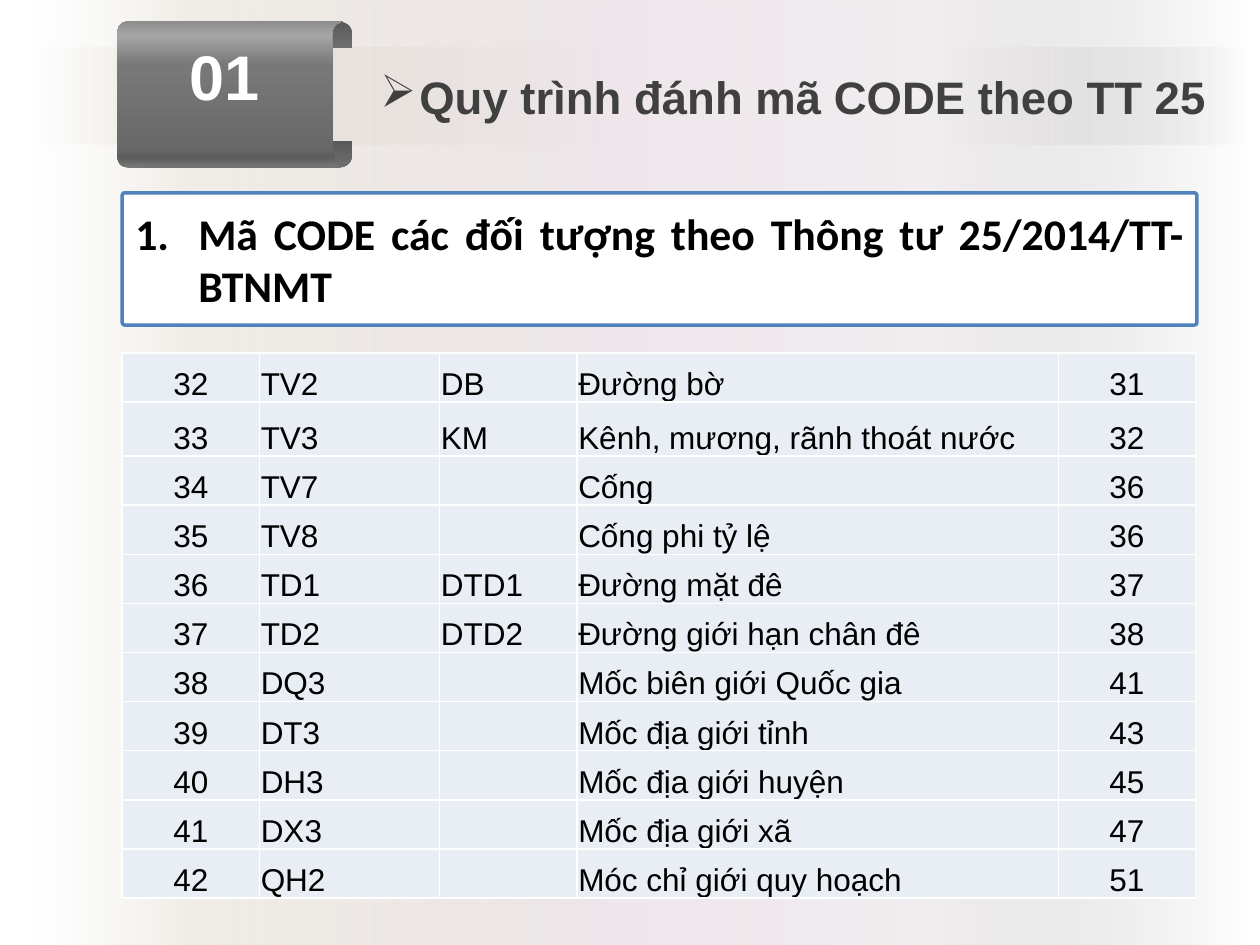
from lxml.etree import SubElement
from pptx import Presentation
from pptx.dml.color import RGBColor
from pptx.enum.shapes import MSO_SHAPE
from pptx.enum.text import MSO_ANCHOR, MSO_AUTO_SIZE, PP_ALIGN
from pptx.oxml.ns import qn
from pptx.util import Inches, Pt

COLORS = {
    "white": "FFFFFF", "black": "000000", "title": "404040", "frame": "4F81BD",
    "cell": "E9EDF4", "mist": "C8C7C6", "pearl": "F0EDEF", "rose": "EEE6EB",
    "sand": "E2DCD1", "cream": "EFEBE5", "curl_dark": "5A5A5A",
    "curl_light": "6E6E6E", "steel": "787878", "shade": "5D5D5D",
    "slate": "696969", "shine": "A5A5A5", "rim": "8C8C8C",
}
BACKDROP_STOPS = [(0, "mist", 0), (25, "pearl", 100), (50, "rose", 100),
                  (85, "sand", 52), (98, "cream", 0)]
CURL_STOPS = [(0, "curl_dark", 100), (100, "curl_light", 100)]
SCROLL_STOPS = [(0, "steel", 100), (7, "shade", 100), (15, "slate", 100),
                (70, "steel", 100), (90, "shine", 100), (100, "rim", 100)]
CURL = [(1.87, 0.21), (0, 0.21), (0.01, 0.04, 0.01, -0.01, 0.17, 0),
        (1.73, 0), (1.87, 0, 1.87, 0.07, 1.87, 0.21)]
SCROLL = [(1.79, 0), (0.32, 0), (0.06, 0, 0, -0.03, 0, 0.13),
          (0, 0.41, 0, 0.7, 0, 0.98), (-0.01, 1.2, 0.05, 1.16, 0.26, 1.16),
          (1.8, 1.16), (1.74, 1.17, 1.71, 1.12, 1.71, 0.94),
          (1.71, 0.71, 1.71, 0.49, 1.71, 0.26), (1.71, 0.1, 1.68, 0.03, 1.79, 0)]
COLUMN_WIDTHS = [1.09, 1.43, 1.09, 3.82, 1.09]
CODES = [
    ("32", "TV2", "DB", "Đường bờ", "31"),
    ("33", "TV3", "KM", "Kênh, mương, rãnh thoát nước", "32"),
    ("34", "TV7", "", "Cống", "36"),
    ("35", "TV8", "", "Cống phi tỷ lệ", "36"),
    ("36", "TD1", "DTD1", "Đường mặt đê", "37"),
    ("37", "TD2", "DTD2", "Đường giới hạn chân đê", "38"),
    ("38", "DQ3", "", "Mốc biên giới Quốc gia", "41"),
    ("39", "DT3", "", "Mốc địa giới tỉnh", "43"),
    ("40", "DH3", "", "Mốc địa giới huyện", "45"),
    ("41", "DX3", "", "Mốc địa giới xã", "47"),
    ("42", "QH2", "", "Móc chỉ giới quy hoạch", "51"),
]


def rgb(name):
    """Return the named colour."""
    return RGBColor.from_string(COLORS[name])


def paint_gradient(shape, stops, angle):
    """Fill a shape with a linear gradient, without line or shadow."""
    shape.fill.background()
    shape.line.fill.background()
    shape.shadow.inherit = False
    no_fill = shape.fill._xPr.find(qn("a:noFill"))
    gradient = SubElement(no_fill.getparent(), qn("a:gradFill"), rotWithShape="1")
    stop_list = SubElement(gradient, qn("a:gsLst"))
    for position, name, opacity in stops:
        stop = SubElement(stop_list, qn("a:gs"), pos=str(position * 1000))
        color = SubElement(stop, qn("a:srgbClr"), val=COLORS[name])
        if opacity < 100:
            SubElement(color, qn("a:alpha"), val=str(opacity * 1000))
    SubElement(gradient, qn("a:lin"), ang=str(angle * 60000), scaled="0")
    no_fill.getparent().replace(no_fill, gradient)


def style_text(paragraph, text, font_name, size, color, bold=False, align=PP_ALIGN.LEFT):
    """Write a paragraph in one font."""
    paragraph.text = text
    paragraph.alignment = align
    font = paragraph.font
    font.name, font.size, font.bold = font_name, Pt(size), bold
    font.color.rgb = rgb(color)


def add_bullet(paragraph, indent, tag, **attributes):
    """Give a paragraph a hanging bullet or number."""
    properties = paragraph._p.get_or_add_pPr()
    properties.set("marL", str(Inches(indent)))
    properties.set("indent", str(-Inches(indent)))
    SubElement(properties, qn(tag), **attributes)


def add_backdrop(slide, left, top, width, height):
    """Place one translucent gradient band."""
    band = slide.shapes.add_shape(MSO_SHAPE.RECTANGLE, Inches(left), Inches(top),
                                  Inches(width), Inches(height))
    paint_gradient(band, BACKDROP_STOPS, 180)


def flatten(outline, steps=12):
    """Turn points and cubic curves into a list of points."""
    points = [outline[0]]
    for segment in outline[1:]:
        if len(segment) == 2:
            points.append(segment)
            continue
        x0, y0 = points[-1]
        x1, y1, x2, y2, x3, y3 = segment
        for step in range(1, steps + 1):
            t = step / steps
            weights = ((1 - t) ** 3, 3 * t * (1 - t) ** 2, 3 * t * t * (1 - t), t ** 3)
            points.append(tuple(sum(w * v for w, v in zip(weights, values))
                                for values in ((x0, x1, x2, x3), (y0, y1, y2, y3))))
    return points


def add_outline(slide, left, top, points, stops, angle):
    """Draw a closed gradient outline from points relative to a corner."""
    corners = [(Inches(left + x), Inches(top + y)) for x, y in points]
    builder = slide.shapes.build_freeform(*corners[0])
    builder.add_line_segments(corners[1:], close=True)
    paint_gradient(builder.convert_to_shape(), stops, angle)


def add_text_box(slide, left, top, width, height):
    """Add a wrapping text box and return its first paragraph."""
    frame = slide.shapes.add_textbox(Inches(left), Inches(top),
                                     Inches(width), Inches(height)).text_frame
    frame.word_wrap = True
    frame.auto_size = MSO_AUTO_SIZE.SHAPE_TO_FIT_TEXT
    return frame.paragraphs[0]


def add_number_scroll(slide, left, top, height):
    """Draw the scroll that carries the section number."""
    curl = flatten(CURL)
    add_outline(slide, left, top, curl, CURL_STOPS, 90)
    add_outline(slide, left, top, [(x, height - y) for x, y in curl], CURL_STOPS, 90)
    add_outline(slide, left, top, flatten(SCROLL), SCROLL_STOPS, 270)
    number = add_text_box(slide, left + 0.04, top + 0.08, 1.62, 0.71)
    style_text(number, "01", "Arial", 36, "white", True, PP_ALIGN.CENTER)


def add_title(slide, left, top, width, height):
    """Place the bulleted slide title."""
    title = add_text_box(slide, left, top, width, height)
    add_bullet(title, 0.31, "a:buChar", char="➢")
    style_text(title, "Quy trình đánh mã CODE theo TT 25", "Arial", 26, "title", True)


def add_heading(slide, left, top, width, height):
    """Place the framed, numbered heading."""
    frame = slide.shapes.add_shape(MSO_SHAPE.ROUNDED_RECTANGLE, Inches(left), Inches(top),
                                   Inches(width), Inches(height))
    frame.adjustments[0] = 0.02
    frame.shadow.inherit = False
    frame.fill.solid()
    frame.fill.fore_color.rgb = rgb("white")
    frame.line.color.rgb = rgb("frame")
    frame.line.width = Pt(2)
    frame.text_frame.vertical_anchor = MSO_ANCHOR.MIDDLE
    heading = frame.text_frame.paragraphs[0]
    add_bullet(heading, 0.5, "a:buAutoNum", type="arabicPeriod")
    heading.space_before = heading.space_after = Pt(2)
    style_text(heading, "Mã CODE các đối tượng theo Thông tư 25/2014/TT-BTNMT",
               "Calibri", 25, "black", True, PP_ALIGN.JUSTIFY)


def style_cell(cell, text, align):
    """Write one table cell with its fill and white borders."""
    properties = cell._tc.get_or_add_tcPr()
    for side in ("a:lnL", "a:lnR", "a:lnT", "a:lnB"):
        border = SubElement(properties, qn(side), w=str(Pt(1)))
        SubElement(SubElement(border, qn("a:solidFill")), qn("a:srgbClr"), val=COLORS["white"])
    cell.fill.solid()
    cell.fill.fore_color.rgb = rgb("cell")
    cell.margin_left = cell.margin_right = cell.margin_top = Inches(0.01)
    cell.margin_bottom = 0
    cell.vertical_anchor = MSO_ANCHOR.BOTTOM
    style_text(cell.text_frame.paragraphs[0], text, "Arial", 18, "black", align=align)


def add_code_table(slide, left, top, width, height):
    """Place the table of object codes."""
    table = slide.shapes.add_table(len(CODES), len(COLUMN_WIDTHS), Inches(left), Inches(top),
                                   Inches(width), Inches(height)).table
    table.first_row = table.horz_banding = False
    for column, column_width in zip(table.columns, COLUMN_WIDTHS):
        column.width = Inches(column_width)
    for r, record in enumerate(CODES):
        table.rows[r].height = Inches(0.43 if r == 1 else 0.39)
        for c, text in enumerate(record):
            align = PP_ALIGN.CENTER if c in (0, 4) else PP_ALIGN.LEFT
            style_cell(table.cell(r, c), text, align)


def main():
    """Build and save the slide."""
    deck = Presentation()
    deck.slide_width, deck.slide_height = Inches(10), Inches(7.5)
    slide = deck.slides.add_slide(deck.slide_layouts[6])
    add_backdrop(slide, 0.02, 0.38, 9.88, 0.77)
    add_backdrop(slide, 0.02, 0, 9.88, 7.5)
    add_number_scroll(slide, 0.93, 0.17, 1.16)
    add_title(slide, 2.92, 0.5, 6.98, 0.54)
    add_heading(slide, 0.97, 1.53, 8.53, 1.05)
    add_code_table(slide, 0.97, 2.8, 8.53, 4.37)
    deck.save("out.pptx")


if __name__ == "__main__":
    main()
